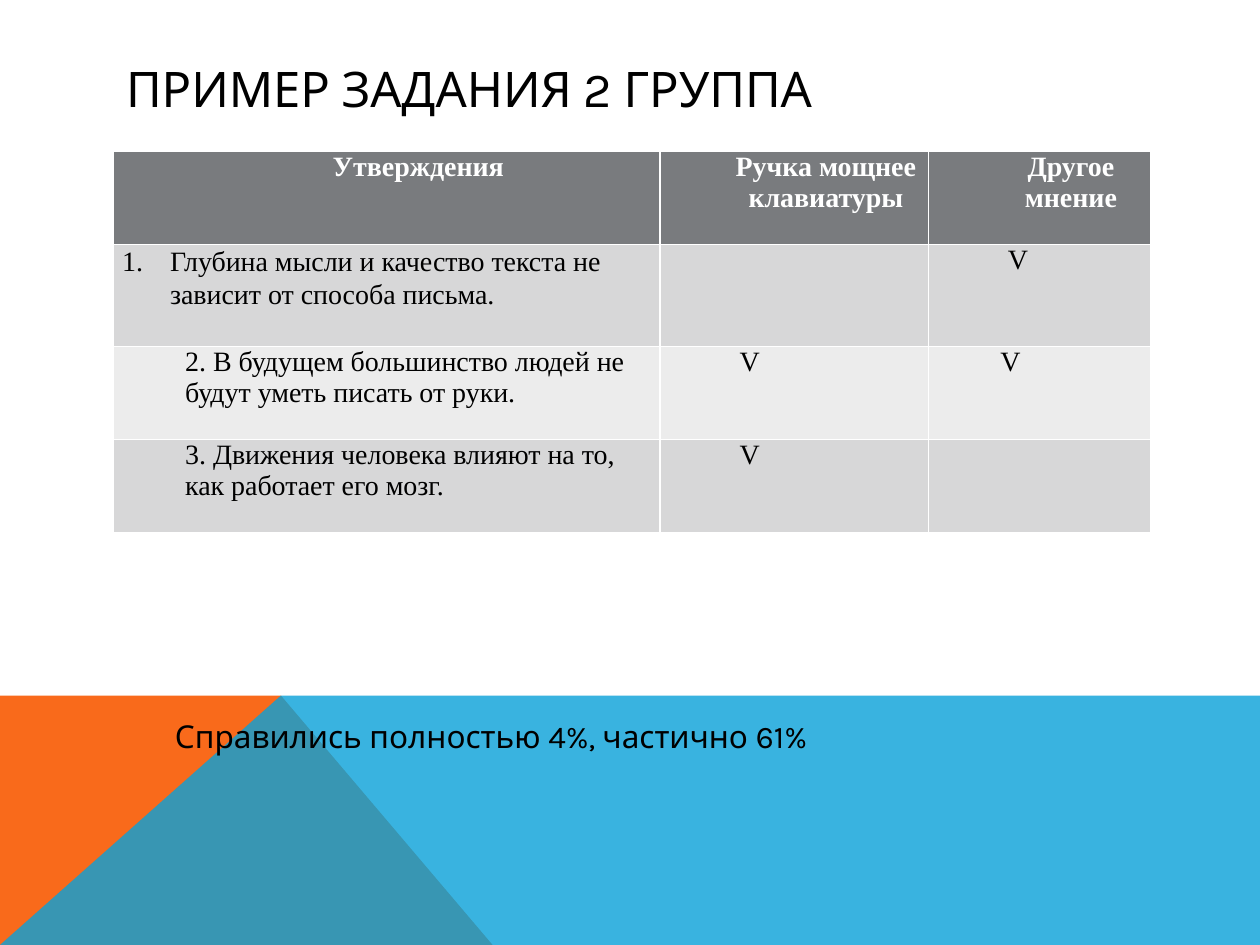
from lxml.etree import SubElement
from pptx import Presentation
from pptx.dml.color import RGBColor
from pptx.enum.text import MSO_ANCHOR as Anchor, MSO_AUTO_SIZE as AutoSize, PP_ALIGN as Align
from pptx.oxml.ns import qn
from pptx.util import Inches, Pt

WIDTH, HEIGHT = 10, 7.5
LEFT = 0.09 * WIDTH
BAND_TOP, PEAK = 0.736 * HEIGHT, 0.223 * WIDTH
COLUMNS = [4.34, 2.13, 1.76]
ROWS = [0.74, 0.81, 0.74, 0.74]
INDENT, HANGING, SPACE = 0.5, 0.38, 0.06
HEADERS = ["Утверждения", "Ручка мощнее клавиатуры", "Другое мнение"]
STATEMENTS = [
    "Глубина мысли и качество текста не зависит от способа письма.",
    "2. В будущем большинство людей не будут уметь писать от руки.",
    "3. Движения человека влияют на то, как работает его мозг.",
]
MARKS = [(1, 2, INDENT + SPACE), (2, 1, INDENT + SPACE), (2, 2, INDENT), (3, 1, INDENT + SPACE)]


def rgb(color):
    return RGBColor.from_string(color)


def style_runs(p, font, size, color, bold=False):
    for r in p.runs:
        r.font.name, r.font.size, r.font.bold = font, Pt(size), bold
        r.font.color.rgb = rgb(color)


def set_indent(p, left, first=0):
    pPr = p._p.get_or_add_pPr()
    pPr.set("marL", str(Inches(left)))
    pPr.set("indent", str(Inches(first)))
    return pPr


def add_band(s, points, color, alpha=100):
    points = [(Inches(x), Inches(y)) for x, y in points]
    builder = s.shapes.build_freeform(*points[0])
    builder.add_line_segments(points[1:], close=True)
    sp = builder.convert_to_shape()
    sp.shadow.inherit = False
    sp.fill.solid()
    sp.fill.fore_color.rgb = rgb(color)
    sp.line.fill.background()
    if alpha < 100:
        srgb = sp._element.spPr.find(qn("a:solidFill")).find(qn("a:srgbClr"))
        SubElement(srgb, qn("a:alpha"), val=str(alpha * 1000))


def set_title(s, text):
    sp = s.shapes.title
    sp.left, sp.top = Inches(LEFT), Inches(0.4)
    sp.width, sp.height = Inches(0.822 * WIDTH), Inches(0.08 * HEIGHT)
    tf = sp.text_frame
    tf.text = text
    tf.auto_size, tf.vertical_anchor = AutoSize.NONE, Anchor.MIDDLE
    p = tf.paragraphs[0]
    p.alignment = Align.LEFT
    style_runs(p, "Karla", 28, "000000")


def add_grid(s):
    table = s.shapes.add_table(len(ROWS), len(COLUMNS), Inches(LEFT), Inches(0.16 * HEIGHT),
                               Inches(sum(COLUMNS)), Inches(sum(ROWS))).table
    for column, width in zip(table.columns, COLUMNS):
        column.width = Inches(width)
    for i, height in enumerate(ROWS):
        table.rows[i].height = Inches(height)
        for cell in table.rows[i].cells:
            cell.margin_left = cell.margin_right = Inches(0.07)
            cell.margin_top = cell.margin_bottom = 0
            cell.fill.solid()
            cell.fill.fore_color.rgb = rgb("797B7E" if i == 0 else "D7D7D8" if i % 2 else "ECECEC")
    return table


def write_cell(cell, text, indent=INDENT, header=False):
    cell.text = text
    p = cell.text_frame.paragraphs[0]
    p.alignment = Align.CENTER if header else Align.LEFT
    set_indent(p, indent)
    style_runs(p, "Times New Roman", 16, "FFFFFF" if header else "000000", header)
    return p


def fill_table(table):
    for j, text in enumerate(HEADERS):
        write_cell(table.cell(0, j), text, header=True)
    for i, text in enumerate(STATEMENTS, 1):
        write_cell(table.cell(i, 0), text)
    for i, j, indent in MARKS:
        write_cell(table.cell(i, j), "V", indent)
    p = table.cell(1, 0).text_frame.paragraphs[0]
    p.line_spacing = 1.07
    SubElement(set_indent(p, HANGING, -HANGING), qn("a:buAutoNum"), type="arabicPeriod")


def add_result(s, text):
    tf = s.shapes.add_textbox(Inches(0.129 * WIDTH), Inches(0.752 * HEIGHT),
                              Inches(0.744 * WIDTH), Inches(0.4)).text_frame
    tf.text = text
    tf.word_wrap, tf.auto_size = True, AutoSize.SHAPE_TO_FIT_TEXT
    p = tf.paragraphs[0]
    p.space_before = Pt(8)
    set_indent(p, HANGING, -HANGING)
    style_runs(p, "Karla", 18, "000000")


def main():
    prs = Presentation()
    prs.slide_width, prs.slide_height = Inches(WIDTH), Inches(HEIGHT)
    s = prs.slides.add_slide(prs.slide_layouts[5])
    peak = (PEAK, BAND_TOP)
    add_band(s, [(0, HEIGHT), (0, BAND_TOP), peak, (0.391 * WIDTH, HEIGHT)], "F96A1B")
    add_band(s, [(0, HEIGHT), peak, (WIDTH, BAND_TOP), (WIDTH, HEIGHT)], "08A1D9", 80)
    set_title(s, "ПРИМЕР ЗАДАНИЯ 2 ГРУППА")
    fill_table(add_grid(s))
    add_result(s, "Справились полностью 4%, частично 61%")
    prs.save("out.pptx")


if __name__ == "__main__":
    main()
